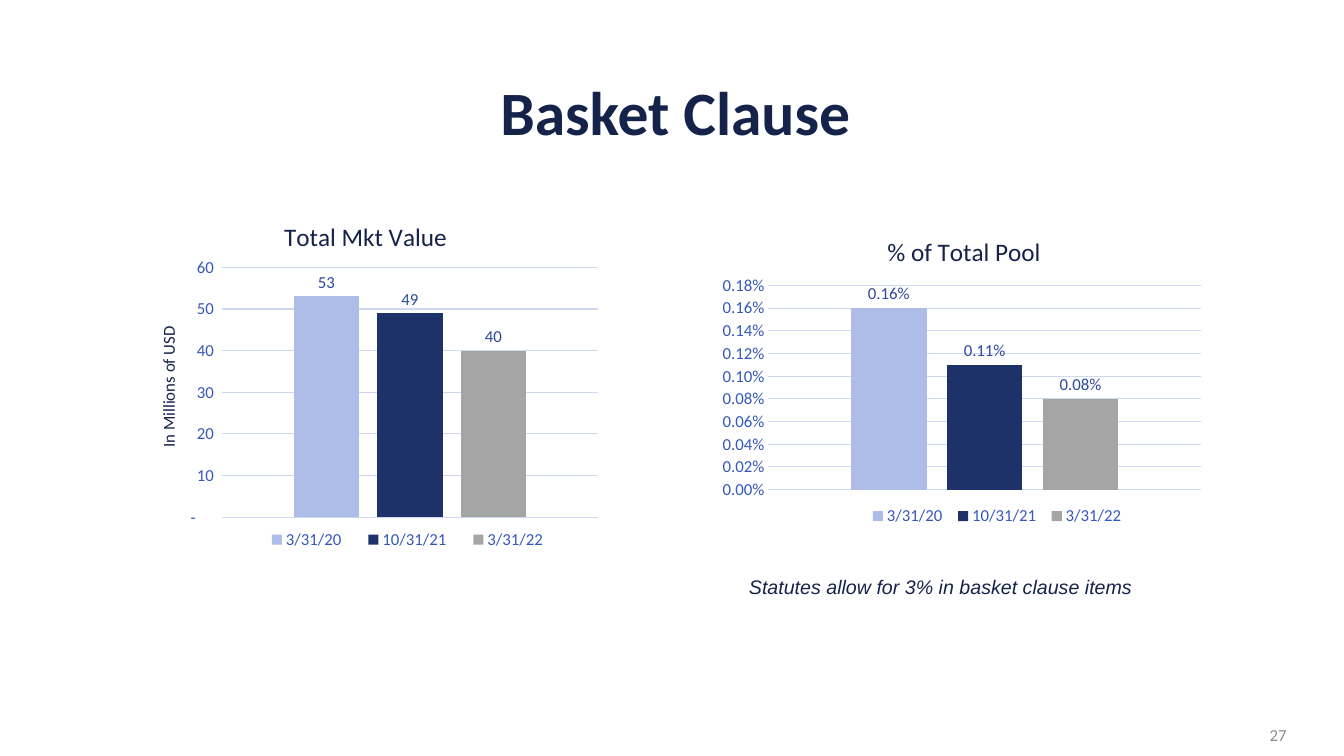
"""Build the Basket Clause slide with two clustered column charts."""
import pptx
import pptx.chart.data
import pptx.dml.color
import pptx.enum.chart
import pptx.enum.text
import pptx.oxml
import pptx.oxml.ns
import pptx.util
from pptx.util import Inches

NAVY = pptx.dml.color.RGBColor(0x15, 0x23, 0x4A)
AXIS_BLUE = pptx.dml.color.RGBColor(0x35, 0x59, 0xBB)
LABEL_BLUE = pptx.dml.color.RGBColor(0x2C, 0x49, 0x9B)
GRID = pptx.dml.color.RGBColor(0xCF, 0xD8, 0xF1)
PAGE_GRAY = pptx.dml.color.RGBColor(0x8C, 0x8D, 0x96)
PERIODS = {
    "3/31/20": pptx.dml.color.RGBColor(0xAE, 0xBD, 0xE8),
    "10/31/21": pptx.dml.color.RGBColor(0x1E, 0x32, 0x6A),
    "3/31/22": pptx.dml.color.RGBColor(0xA5, 0xA5, 0xA5),
}
MILLIONS = '_(* #,##0_);_(* \\(#,##0\\);_(* "-"??_);_('


def style(font, size, color, name="Calibri", bold=False, italic=False):
    font.size = pptx.util.Pt(size)
    font.name = name
    font.bold = bold
    font.italic = italic
    font.color.rgb = color


def place(parent, index, fractions, target=""):
    for old in parent.findall(pptx.oxml.ns.qn("c:layout")):
        parent.remove(old)
    modes = "".join(f'<c:{side}Mode val="edge"/>' for side in "xy")
    values = "".join(f'<c:{side} val="{value}"/>' for side, value in zip("xywh", fractions))
    parent.insert(index, pptx.oxml.parse_xml(
        f'<c:layout {pptx.oxml.ns.nsdecls("c")}><c:manualLayout>'
        f"{target}{modes}{values}</c:manualLayout></c:layout>"))


presentation = pptx.Presentation()
presentation.slide_width = Inches(13.33)
presentation.slide_height = Inches(7.5)
slide = presentation.slides.add_slide(presentation.slide_layouts[5])

title = slide.shapes.title
title.left, title.top, title.width, title.height = map(Inches, (0.95, 0.42, 11.5, 1.45))
title.text_frame.text = "Basket Clause"
title.text_frame.vertical_anchor = pptx.enum.text.MSO_ANCHOR.MIDDLE
paragraph = title.text_frame.paragraphs[0]
paragraph.alignment = pptx.enum.text.PP_ALIGN.CENTER
paragraph.line_spacing = 0.9
style(paragraph.runs[0].font, 44, NAVY, bold=True)

notes = [
    ("Statutes allow for 3% in basket clause items", (7.19, 5.65, 4.28, 0.34),
     pptx.enum.text.PP_ALIGN.CENTER, pptx.enum.text.MSO_ANCHOR.TOP, (14, NAVY, "Arial", False, True)),
    ("27", (9.86, 7.09, 3, 0.4),
     pptx.enum.text.PP_ALIGN.RIGHT, pptx.enum.text.MSO_ANCHOR.MIDDLE, (12, PAGE_GRAY)),
]
for text, box, alignment, anchor, look in notes:
    text_frame = slide.shapes.add_textbox(*map(Inches, box)).text_frame
    text_frame.word_wrap = True
    text_frame.vertical_anchor = anchor
    text_frame.text = text
    text_frame.paragraphs[0].alignment = alignment
    style(text_frame.paragraphs[0].runs[0].font, *look)

charts = [
    ("Total Mkt Value", "In Millions of USD", (1.24, 1.95, 4.79, 3.7), (53, 49, 40), MILLIONS, 60, 10,
     (0.32, 0.05), (0.2, 0.19, 0.78, 0.67), (0.26, 0.88, 0.65, 0.08)),
    ("% of Total Pool", None, (7.08, 2.08, 4.93, 3.27), (0.0016, 0.0011, 0.0008), "0.00%", 0.0018, 0.0002,
     (0.34, 0.06), (0.11, 0.23, 0.87, 0.62), (0.3, 0.89, 0.54, 0.08)),
]
for heading, unit, box, values, number_format, top, step, title_at, plot_at, legend_at in charts:
    data = pptx.chart.data.CategoryChartData(number_format=number_format)
    data.categories = ["1"]
    for period, value in zip(PERIODS, values):
        data.add_series(period, [value])
    chart = slide.shapes.add_chart(
        pptx.enum.chart.XL_CHART_TYPE.COLUMN_CLUSTERED, *map(Inches, box), data).chart
    style(chart.font, 10, NAVY)

    chart.has_title = True
    chart.chart_title.text_frame.text = heading
    style(chart.chart_title.text_frame.paragraphs[0].runs[0].font, 18, NAVY)
    chart.chart_title.include_in_layout = False
    chart.has_legend = True
    chart.legend.position = pptx.enum.chart.XL_LEGEND_POSITION.BOTTOM
    chart.legend.include_in_layout = False
    style(chart.legend.font, 12, AXIS_BLUE)

    chart.category_axis.visible = False
    axis = chart.value_axis
    axis.minimum_scale, axis.maximum_scale, axis.major_unit = 0, top, step
    axis.major_tick_mark = pptx.enum.chart.XL_TICK_MARK.NONE
    axis.format.line.fill.background()
    axis.major_gridlines.format.line.color.rgb = GRID
    axis.major_gridlines.format.line.width = pptx.util.Pt(0.75)
    axis.tick_labels.number_format = number_format
    axis.tick_labels.number_format_is_linked = False
    style(axis.tick_labels.font, 12, AXIS_BLUE)

    plot = chart.plots[0]
    plot.vary_by_categories = False
    plot.gap_width = 219
    plot.overlap = -27
    for series, color in zip(plot.series, PERIODS.values()):
        series.format.fill.solid()
        series.format.fill.fore_color.rgb = color
        labels = series.data_labels
        labels.show_value = True
        labels.position = pptx.enum.chart.XL_LABEL_POSITION.OUTSIDE_END
        labels.number_format = number_format
        labels.number_format_is_linked = False
        style(labels.font, 12, LABEL_BLUE)

    names = chart.element.nsmap
    place(chart.element.find("c:chart/c:title", names), 1, title_at)
    place(chart.element.find("c:chart/c:legend", names), 1, legend_at)
    place(chart.element.find("c:chart/c:plotArea", names), 0, plot_at, '<c:layoutTarget val="inner"/>')
    if unit:
        axis.axis_title.text_frame.text = unit
        style(axis.axis_title.text_frame.paragraphs[0].runs[0].font, 12, NAVY)
        unit_title = chart.element.find(".//c:valAx/c:title", names)
        unit_title.find(".//a:bodyPr", names).set("rot", "-5400000")
        place(unit_title, 1, (0.06, 0.34))

presentation.save("out.pptx")
